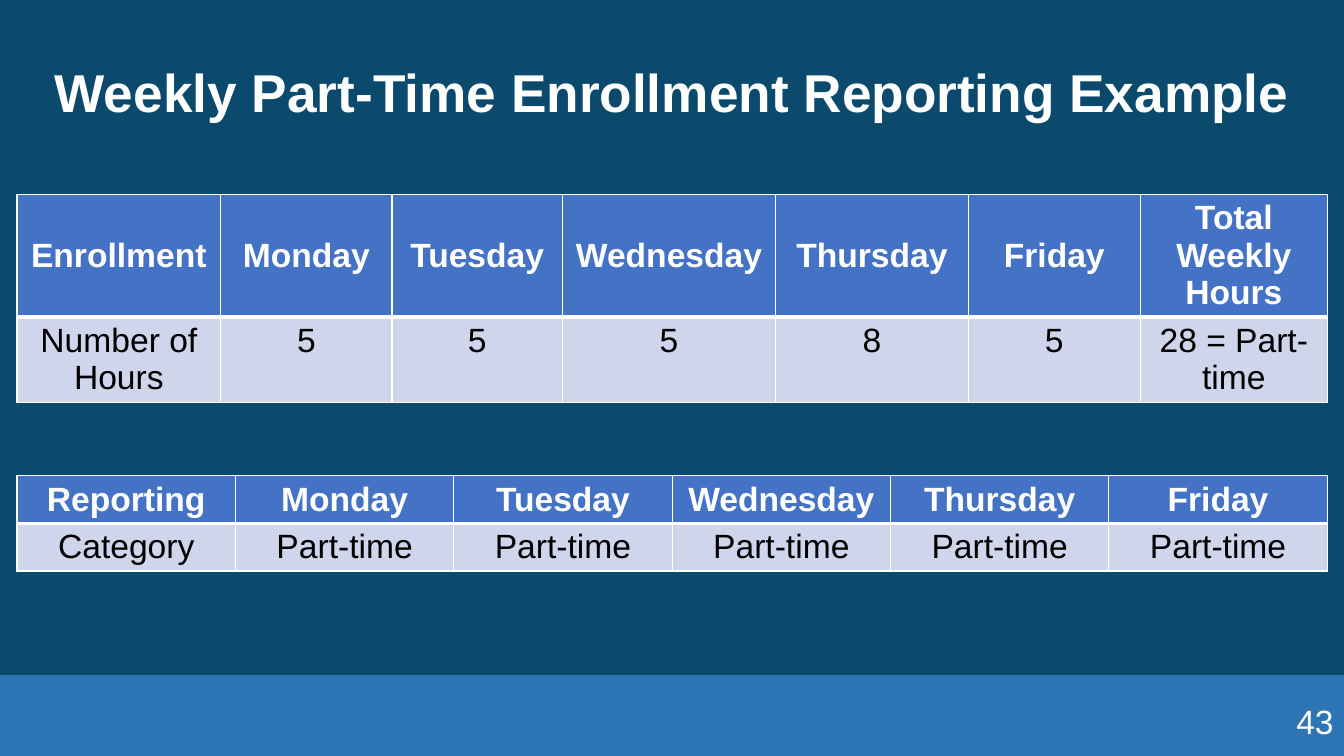
from lxml import etree
from pptx import Presentation
from pptx.dml.color import RGBColor
from pptx.enum.shapes import MSO_SHAPE
from pptx.enum.text import MSO_ANCHOR, MSO_AUTO_SIZE, PP_ALIGN
from pptx.oxml.ns import qn
from pptx.util import Cm, Pt

RECTANGLE = MSO_SHAPE.RECTANGLE
TOP, MIDDLE = MSO_ANCHOR.TOP, MSO_ANCHOR.MIDDLE
CENTER, RIGHT = PP_ALIGN.CENTER, PP_ALIGN.RIGHT
NO_FIT = MSO_AUTO_SIZE.NONE

NAVY = RGBColor(0x0C, 0x4A, 0x6D)
BAND_BLUE = RGBColor(0x2E, 0x75, 0xB6)
HEADER_BLUE = RGBColor(0x44, 0x72, 0xC4)
PALE_BLUE = RGBColor(0xCF, 0xD5, 0xEA)
WHITE = RGBColor(0xFF, 0xFF, 0xFF)
BLACK = RGBColor(0x00, 0x00, 0x00)

FONT = "Arial"
SLIDE_W, SLIDE_H = 33.87, 19.05
MARGIN, CONTENT_W = 0.43, 33.02
DAYS = ["Monday", "Tuesday", "Wednesday", "Thursday", "Friday"]


def write(tf, text, size, color, bold=False, align=CENTER):
    p = tf.paragraphs[0]
    p.alignment = align
    r = p.add_run()
    r.text = text
    r.font.name = FONT
    r.font.size = Pt(size)
    r.font.bold = bold
    r.font.color.rgb = color
    return p


def add_band(s, top, height):
    sp = s.shapes.add_shape(RECTANGLE, 0, Cm(top), Cm(SLIDE_W), Cm(height))
    sp.shadow.inherit = False
    sp.fill.solid()
    sp.fill.fore_color.rgb = BAND_BLUE
    sp.line.fill.background()


def set_title(s, text):
    sp = s.shapes.title
    sp.left, sp.top = Cm(MARGIN), Cm(0.56)
    sp.width, sp.height = Cm(CONTENT_W), Cm(3.68)
    tf = sp.text_frame
    tf.word_wrap = True
    tf.auto_size = NO_FIT
    tf.vertical_anchor = MIDDLE
    p = write(tf, text, 38, WHITE, bold=True)
    p.line_spacing = 0.9


def set_borders(cell, **widths):
    tcPr = cell._tc.get_or_add_tcPr()
    for side in "LRTB":
        width = Pt(widths.get(side, 1))
        ln = etree.SubElement(tcPr, qn(f"a:ln{side}"), w=str(width))
        fill = etree.SubElement(ln, qn("a:solidFill"))
        etree.SubElement(fill, qn("a:srgbClr"), val=str(WHITE))


def format_cell(cell, text, is_header, anchor):
    if is_header:
        set_borders(cell, B=3)
    else:
        set_borders(cell, T=3)
    cell.fill.solid()
    cell.fill.fore_color.rgb = HEADER_BLUE if is_header else PALE_BLUE
    cell.vertical_anchor = anchor
    write(cell.text_frame, text, 24, WHITE if is_header else BLACK, is_header)


def add_hours_table(s, top, rows, col_widths, row_heights):
    frame = s.shapes.add_table(len(rows), len(col_widths), Cm(MARGIN), Cm(top),
                               Cm(sum(col_widths)), Cm(sum(row_heights)))
    table = frame.table
    for col, width in zip(table.columns, col_widths):
        col.width = Cm(width)
    for i, (row, height) in enumerate(zip(rows, row_heights)):
        table.rows[i].height = Cm(height)
        for j, text in enumerate(row):
            format_cell(table.cell(i, j), text, i == 0, MIDDLE if i == 0 else TOP)


def add_page_number(s, number):
    sp = s.shapes.add_textbox(Cm(26.24), Cm(17.53), Cm(7.62), Cm(1.02))
    tf = sp.text_frame
    tf.word_wrap = True
    write(tf, number, 24, WHITE, align=RIGHT)


def main():
    prs = Presentation()
    prs.slide_width, prs.slide_height = Cm(SLIDE_W), Cm(SLIDE_H)
    s = prs.slides.add_slide(prs.slide_layouts[5])
    s.background.fill.solid()
    s.background.fill.fore_color.rgb = NAVY

    add_band(s, 17.01, 2.04)
    set_title(s, "Weekly Part-Time Enrollment Reporting Example")
    add_hours_table(
        s, 4.9,
        [["Enrollment", *DAYS, "Total Weekly Hours"],
         ["Number of Hours", "5", "5", "5", "8", "5", "28 = Part-time"]],
        [5.13, 4.32, 4.29, 5.38, 4.85, 4.34, 4.71], [3.09, 2.16])
    add_hours_table(
        s, 11.99,
        [["Reporting", *DAYS], ["Category"] + ["Part-time"] * len(DAYS)],
        [CONTENT_W / 6] * 6, [1.2, 1.2])
    add_page_number(s, "43")
    prs.save("out.pptx")


if __name__ == "__main__":
    main()
